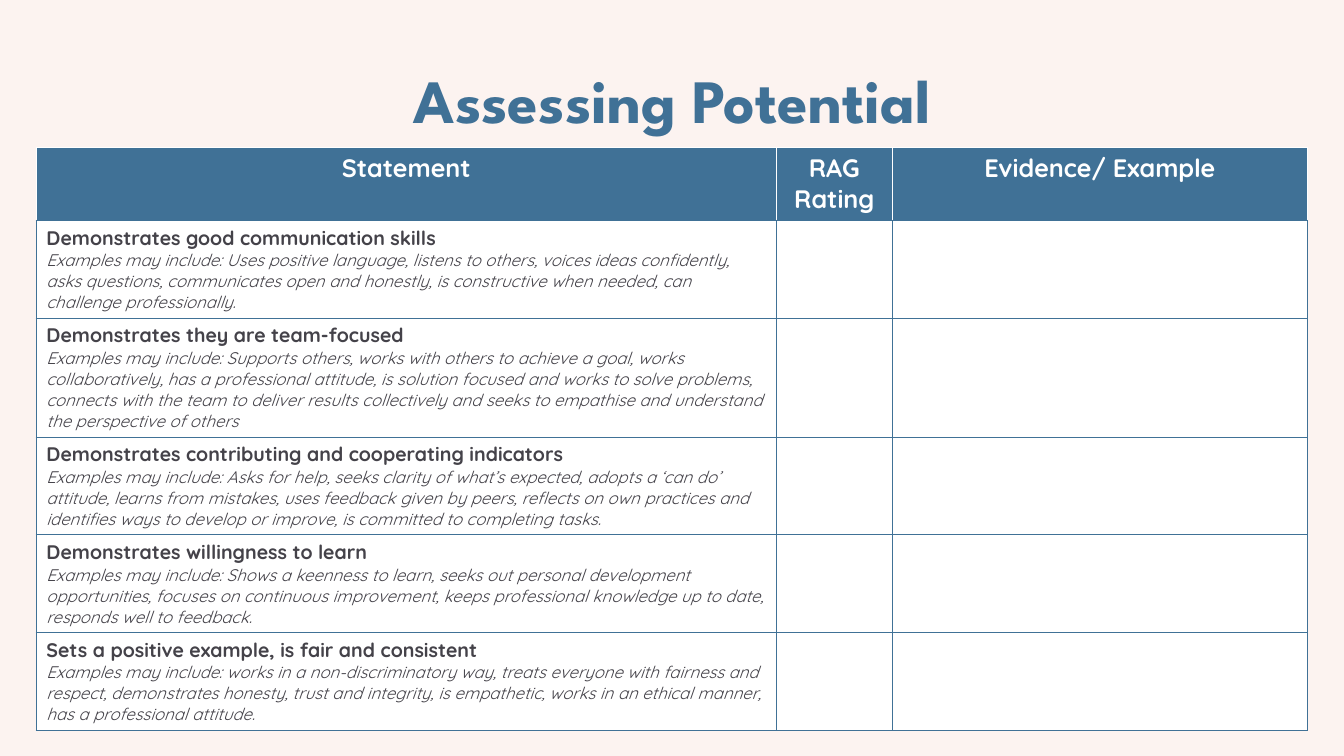
from dataclasses import dataclass

from lxml.etree import SubElement
from pptx import Presentation
from pptx.dml.color import RGBColor
from pptx.enum.text import MSO_ANCHOR as Anchor, MSO_AUTO_SIZE as AutoSize, PP_ALIGN as Align
from pptx.oxml.ns import qn
from pptx.util import Inches, Pt


@dataclass(frozen=True)
class Theme:
    background: str = "FCF3F0"
    blue: str = "407196"
    white: str = "FFFFFF"
    text: str = "444249"
    title_font: str = "League Spartan"
    body_font: str = "Quicksand"
    title_size: int = 44
    header_size: int = 18
    statement_size: int = 14
    example_size: int = 12
    border_width: int = 1


THEME = Theme()
HEADERS = ["Statement", "RAG Rating", "Evidence/ Example"]
COLUMN_WIDTHS = [7.34, 1.15, 4.12]
HEADER_HEIGHT = 0.72
TABLE_LEFT, TABLE_TOP = 0.36, 1.46

# Statement, examples, row height
STATEMENTS = [
    ("Demonstrates good communication skills",
     "Uses positive language, listens to others, voices ideas confidently, asks questions, "
     "communicates open and honestly, is constructive when needed, can challenge professionally.",
     0.97),
    ("Demonstrates they are team-focused",
     "Supports others, works with others to achieve a goal, works collaboratively, has a "
     "professional attitude, is solution focused and works to solve problems, connects with the "
     "team to deliver results collectively and seeks to empathise and understand the perspective "
     "of others",
     1.18),
    ("Demonstrates contributing and cooperating indicators",
     "Asks for help, seeks clarity of what’s expected, adopts a ‘can do’ attitude, learns from "
     "mistakes, uses feedback given by peers, reflects on own practices and identifies ways to "
     "develop or improve, is committed to completing tasks.",
     0.97),
    ("Demonstrates willingness to learn",
     "Shows a keenness to learn, seeks out personal development opportunities, focuses on "
     "continuous improvement, keeps professional knowledge up to date, responds well to feedback.",
     0.97),
    ("Sets a positive example, is fair and consistent",
     "works in a non-discriminatory way, treats everyone with fairness and respect, demonstrates "
     "honesty, trust and integrity, is empathetic, works in an ethical manner, has a professional "
     "attitude.",
     0.97),
]


def write_text(paragraph, text, *, size, color, font=THEME.body_font, bold=False,
               italic=False, align=Align.LEFT):
    paragraph.alignment = align
    run = paragraph.add_run()
    run.text = text
    run.font.name = font
    run.font.size = Pt(size)
    run.font.bold = bold
    run.font.italic = italic
    run.font.color.rgb = RGBColor.from_string(color)


def style_cell(cell, fill, side_color):
    """Draw the borders, then fill the cell; the bottom border is always blue."""
    properties = cell._tc.get_or_add_tcPr()
    sides = {"a:lnL": side_color, "a:lnR": side_color, "a:lnT": side_color, "a:lnB": THEME.blue}
    for side, color in sides.items():
        line = SubElement(properties, qn(side), w=str(Pt(THEME.border_width)))
        solid = SubElement(line, qn("a:solidFill"))
        SubElement(solid, qn("a:srgbClr"), val=color)
    cell.fill.solid()
    cell.fill.fore_color.rgb = RGBColor.from_string(fill)


def add_title(slide, text):
    title = slide.shapes.title
    title.left, title.top = Inches(0.92), Inches(0.6)
    title.width, title.height = Inches(11.5), Inches(0.85)
    frame = title.text_frame
    frame.auto_size = AutoSize.NONE
    frame.vertical_anchor = Anchor.MIDDLE
    paragraph = frame.paragraphs[0]
    paragraph.line_spacing = 0.9
    write_text(paragraph, text, size=THEME.title_size, color=THEME.blue,
               font=THEME.title_font, bold=True, align=Align.CENTER)


def add_statement(cell, statement, examples):
    frame = cell.text_frame
    write_text(frame.paragraphs[0], statement, size=THEME.statement_size,
               color=THEME.text, bold=True)
    write_text(frame.add_paragraph(), f"Examples may include: {examples}",
               size=THEME.example_size, color=THEME.text, italic=True)


def add_assessment_table(slide):
    heights = [HEADER_HEIGHT] + [height for _, _, height in STATEMENTS]
    table = slide.shapes.add_table(
        len(heights), len(HEADERS), Inches(TABLE_LEFT), Inches(TABLE_TOP),
        Inches(sum(COLUMN_WIDTHS)), Inches(sum(heights))).table
    for column, width in zip(table.columns, COLUMN_WIDTHS):
        column.width = Inches(width)
    for row, height in zip(table.rows, heights):
        row.height = Inches(height)

    # Header row
    for cell, header in zip(table.rows[0].cells, HEADERS):
        style_cell(cell, THEME.blue, THEME.white)
        write_text(cell.text_frame.paragraphs[0], header, size=THEME.header_size,
                   color=THEME.white, bold=True, align=Align.CENTER)

    # Statement rows, with empty cells for rating and evidence
    for index, (statement, examples, _) in enumerate(STATEMENTS, start=1):
        for cell in table.rows[index].cells:
            style_cell(cell, THEME.white, THEME.blue)
        add_statement(table.cell(index, 0), statement, examples)


def main():
    presentation = Presentation()
    presentation.slide_width = Inches(13.33)
    presentation.slide_height = Inches(7.5)
    slide = presentation.slides.add_slide(presentation.slide_layouts[5])
    slide.background.fill.solid()
    slide.background.fill.fore_color.rgb = RGBColor.from_string(THEME.background)
    add_title(slide, "Assessing Potential")
    add_assessment_table(slide)
    presentation.save("out.pptx")


if __name__ == "__main__":
    main()
